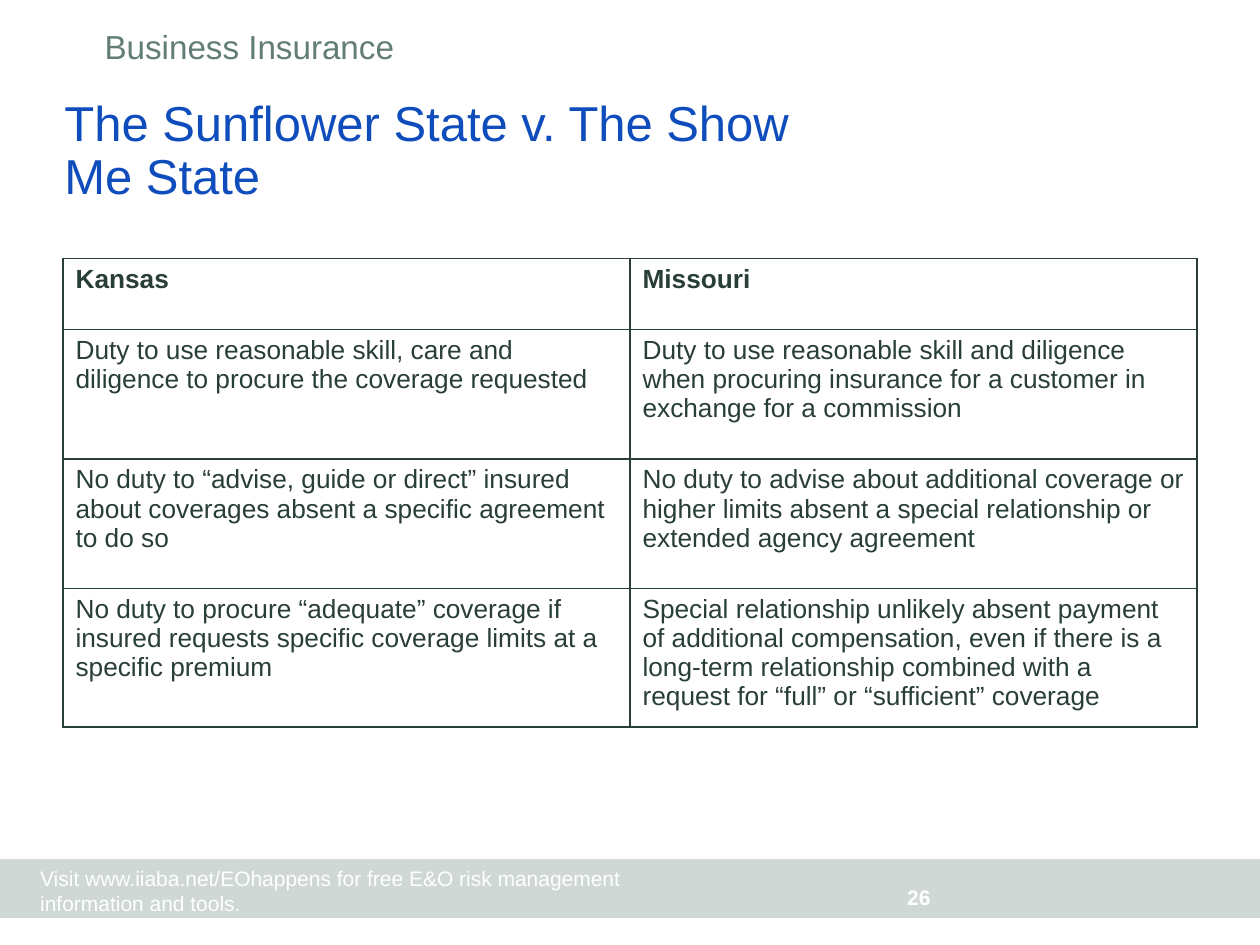
import pptx
import pptx.dml.color
import pptx.enum.shapes
import pptx.enum.text
import pptx.oxml
import pptx.oxml.ns
import pptx.util
from pptx.dml.color import RGBColor
from pptx.util import Cm

WHITE = RGBColor(0xFF, 0xFF, 0xFF)
MIST = RGBColor(0xD0, 0xD8, 0xD6)
SAGE = RGBColor(0x62, 0x7D, 0x77)
BLUE = RGBColor(0x0F, 0x4D, 0xBC)
PINE = RGBColor(0x28, 0x3E, 0x36)

ROWS = [
    ("Kansas", "Missouri"),
    ("Duty to use reasonable skill, care and diligence to procure the coverage requested",
     "Duty to use reasonable skill and diligence when procuring insurance for a customer "
     "in exchange for a commission"),
    ("No duty to “advise, guide or direct” insured about coverages absent a specific "
     "agreement to do so",
     "No duty to advise about additional coverage or higher limits absent a special "
     "relationship or extended agency agreement"),
    ("No duty to procure “adequate” coverage if insured requests specific coverage limits "
     "at a specific premium",
     "Special relationship unlikely absent payment of additional compensation, even if "
     "there is a long-term relationship combined with a request for “full” or "
     "“sufficient” coverage"),
]


class Page:
    face = "Arial"
    line = pptx.util.Pt(1)

    def __init__(self, deck):
        self.slide = deck.slides.add_slide(deck.slide_layouts[6])

    def style(self, para, size, color, bold=False):
        para.font.name = self.face
        para.font.size = pptx.util.Pt(size)
        para.font.bold = bold
        para.font.color.rgb = color

    def band(self, box, color):
        shape = self.slide.shapes.add_shape(
            pptx.enum.shapes.MSO_SHAPE.RECTANGLE, *map(Cm, box))
        shape.shadow.inherit = False
        shape.fill.solid()
        shape.fill.fore_color.rgb = color
        shape.line.fill.background()

    def text(self, words, box, size, color, bold=False, inset=(0, 0),
             low=False, wrap=True, pitch=None):
        frame = self.slide.shapes.add_textbox(*map(Cm, box)).text_frame
        frame.word_wrap = wrap
        frame.margin_left = frame.margin_right = Cm(inset[0])
        frame.margin_top = frame.margin_bottom = Cm(inset[1])
        anchor = pptx.enum.text.MSO_ANCHOR
        frame.vertical_anchor = anchor.BOTTOM if low else anchor.TOP
        para = frame.paragraphs[0]
        para.text = words
        para.line_spacing = pitch
        self.style(para, size, color, bold)

    def edge(self, cell, color):
        props = cell._tc.get_or_add_tcPr()
        for spot, side in enumerate(("lnL", "lnR", "lnT", "lnB")):
            props.insert(spot, pptx.oxml.parse_xml(
                f'<a:{side} {pptx.oxml.ns.nsdecls("a")} w="{self.line}"><a:solidFill>'
                f'<a:srgbClr val="{color}"/></a:solidFill></a:{side}>'))

    def table(self, rows, box, highs, size, color):
        grid = self.slide.shapes.add_table(
            len(rows), len(rows[0]), *map(Cm, box)).table
        for r, row in enumerate(rows):
            grid.rows[r].height = Cm(highs[r])
            for c, words in enumerate(row):
                cell = grid.cell(r, c)
                cell.text = words
                cell.fill.background()
                self.edge(cell, color)
                self.style(cell.text_frame.paragraphs[0], size, color, r == 0)


def main():
    deck = pptx.Presentation()
    deck.slide_width, deck.slide_height = Cm(25.4), Cm(19.05)
    page = Page(deck)

    # Footer band and header
    page.band((0, 17.32, 25.4, 1.19), MIST)
    page.text("Business Insurance", (2.11, 0.53, 14.6, 0.76), 19, SAGE)
    page.text("Visit www.iiaba.net/EOhappens for free E&O risk management "
              "information and tools.",
              (0.56, 17.32, 12.6, 1.27), 12, WHITE, inset=(0.25, 0.13))

    # Title
    page.text("The Sunflower State v. The Show Me State",
              (1.3, 1.73, 16.2, 2.41), 28, BLUE, low=True, pitch=0.9)

    # State comparison
    highs = [1.43] + [2.61] * 3
    page.table(ROWS, (1.27, 5.21, 22.86, sum(highs)), highs, 15, PINE)

    # Page number
    page.text("26", (18.29, 17.32, 5.92, 1.02), 12, WHITE, bold=True,
              low=True, wrap=False)

    deck.save("out.pptx")


if __name__ == "__main__":
    main()
